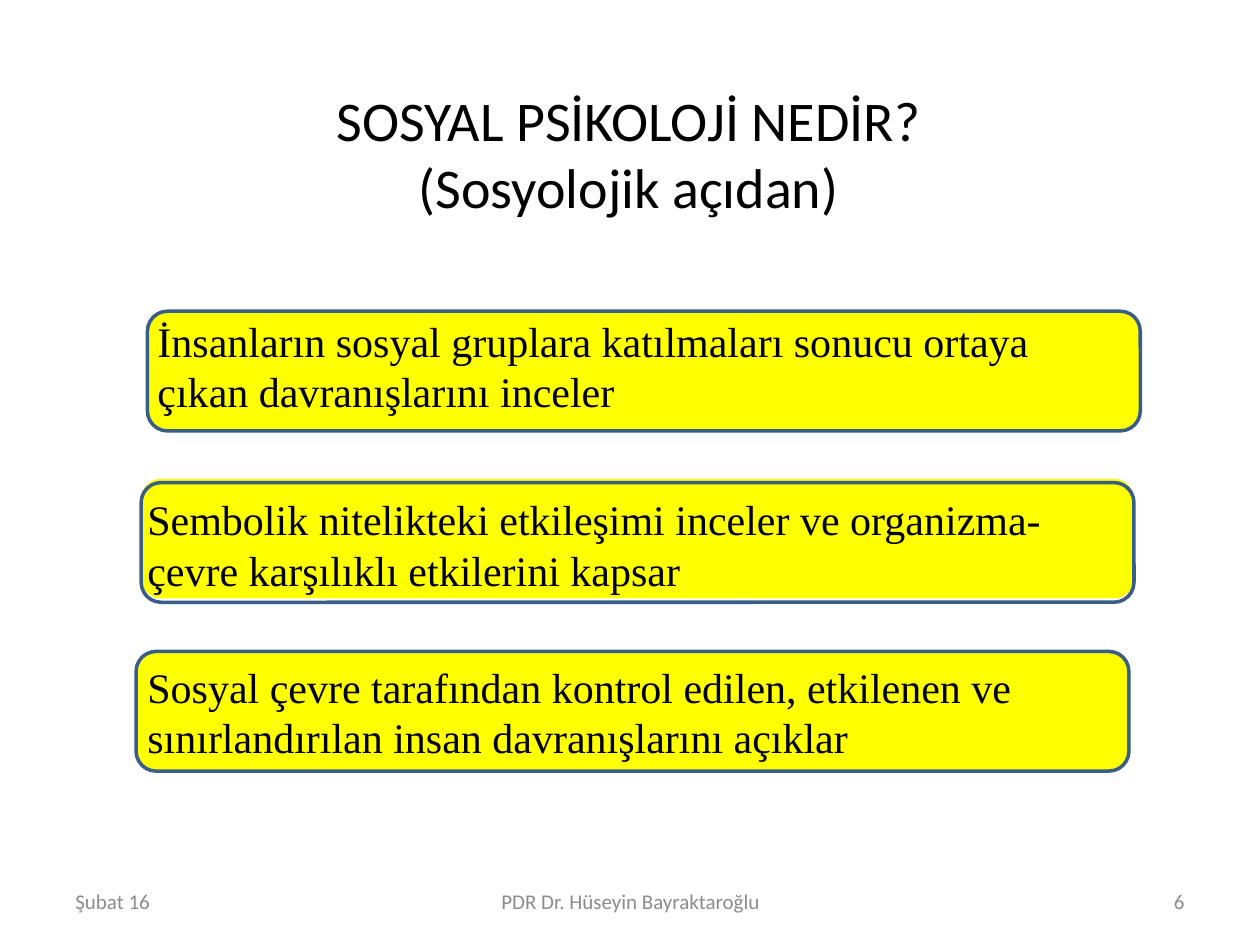
from dataclasses import dataclass

from pptx import Presentation
from pptx.dml.color import RGBColor
from pptx.enum.shapes import MSO_SHAPE
from pptx.enum.text import MSO_ANCHOR, PP_ALIGN
from pptx.util import Inches, Pt

ROUNDED = MSO_SHAPE.ROUNDED_RECTANGLE
TOP, MIDDLE = MSO_ANCHOR.TOP, MSO_ANCHOR.MIDDLE
LEFT, CENTER, RIGHT = PP_ALIGN.LEFT, PP_ALIGN.CENTER, PP_ALIGN.RIGHT


@dataclass(frozen=True)
class Theme:
    ink: RGBColor = RGBColor.from_string("000000")
    muted: RGBColor = RGBColor.from_string("8C8C8C")
    card: RGBColor = RGBColor.from_string("FFFF00")
    border: RGBColor = RGBColor.from_string("385D89")
    heading_font: str = "Calibri"
    body_font: str = "Times New Roman"
    title_size: int = 32
    body_size: int = 24
    footer_size: int = 12
    border_width: int = 2


THEME = Theme()

# Content
TITLE = "SOSYAL PSİKOLOJİ NEDİR?\v(Sosyolojik açıdan)"
# Wording, card left and top, outline drop, text left and top
CARDS = [
    ("İnsanların sosyal gruplara katılmaları sonucu ortaya çıkan "
     "davranışlarını inceler", 1.17, 2.47, 0, 1.25, 2.5),
    ("Sembolik nitelikteki etkileşimi inceler ve organizma-çevre "
     "karşılıklı etkilerini kapsar", 1.12, 3.8, 0.03, 1.17, 3.92),
    ("Sosyal çevre tarafından kontrol edilen, etkilenen ve "
     "sınırlandırılan insan davranışlarını açıklar", 1.08, 5.17, 0, 1.17, 5.25),
]
# Wording, left, width, alignment
FOOTERS = [
    ("Şubat 16", 0.5, 2.33, LEFT),
    ("PDR Dr. Hüseyin Bayraktaroğlu", 3.42, 3.17, CENTER),
    ("6", 7.17, 2.33, RIGHT),
]

# Sizes in inches
PAGE_WIDTH, PAGE_HEIGHT = 10, 7.5
TITLE_AREA = (2.33, 0.67, 5.32, 1.08)
CARD_WIDTH, CARD_HEIGHT = 7.88, 0.95
TEXT_WIDTH, TEXT_HEIGHT = 7.67, 0.81
FOOTER_TOP, FOOTER_HEIGHT = 6.95, 0.4


def write(box, wording, font, size, color, align=LEFT, anchor=TOP, inset=None):
    frame = box.text_frame
    frame.word_wrap = True
    frame.vertical_anchor = anchor
    if inset is not None:
        frame.margin_left = frame.margin_right = Inches(inset)
        frame.margin_top = frame.margin_bottom = Inches(inset)
    para = frame.paragraphs[0]
    para.text = wording
    para.alignment = align
    for span in para.runs:
        span.font.name = font
        span.font.size = Pt(size)
        span.font.color.rgb = color


def add_text(page, area, *style, **options):
    box = page.shapes.add_textbox(*map(Inches, area))
    write(box, *style, **options)


def add_card(page, left, top):
    card = page.shapes.add_shape(
        ROUNDED, *map(Inches, (left, top, CARD_WIDTH, CARD_HEIGHT)))
    card.shadow.inherit = False
    card.fill.background()
    card.line.fill.background()
    return card


def main():
    deck = Presentation()
    deck.slide_width, deck.slide_height = Inches(PAGE_WIDTH), Inches(PAGE_HEIGHT)
    page = deck.slides.add_slide(deck.slide_layouts[5])

    # Title
    title = page.shapes.title
    title.left, title.top, title.width, title.height = map(Inches, TITLE_AREA)
    write(title, TITLE, THEME.heading_font, THEME.title_size, THEME.ink,
          CENTER, MIDDLE, inset=0)

    # Cards: filled body, outline and wording
    for wording, left, top, drop, text_left, text_top in CARDS:
        body = add_card(page, left, top)
        body.fill.solid()
        body.fill.fore_color.rgb = THEME.card
        outline = add_card(page, left, top + drop)
        outline.line.color.rgb = THEME.border
        outline.line.width = Pt(THEME.border_width)
        add_text(page, (text_left, text_top, TEXT_WIDTH, TEXT_HEIGHT), wording,
                 THEME.body_font, THEME.body_size, THEME.ink, inset=0)

    # Footer
    for wording, left, width, align in FOOTERS:
        add_text(page, (left, FOOTER_TOP, width, FOOTER_HEIGHT), wording,
                 THEME.heading_font, THEME.footer_size, THEME.muted,
                 align, MIDDLE)

    deck.save("out.pptx")


if __name__ == "__main__":
    main()
